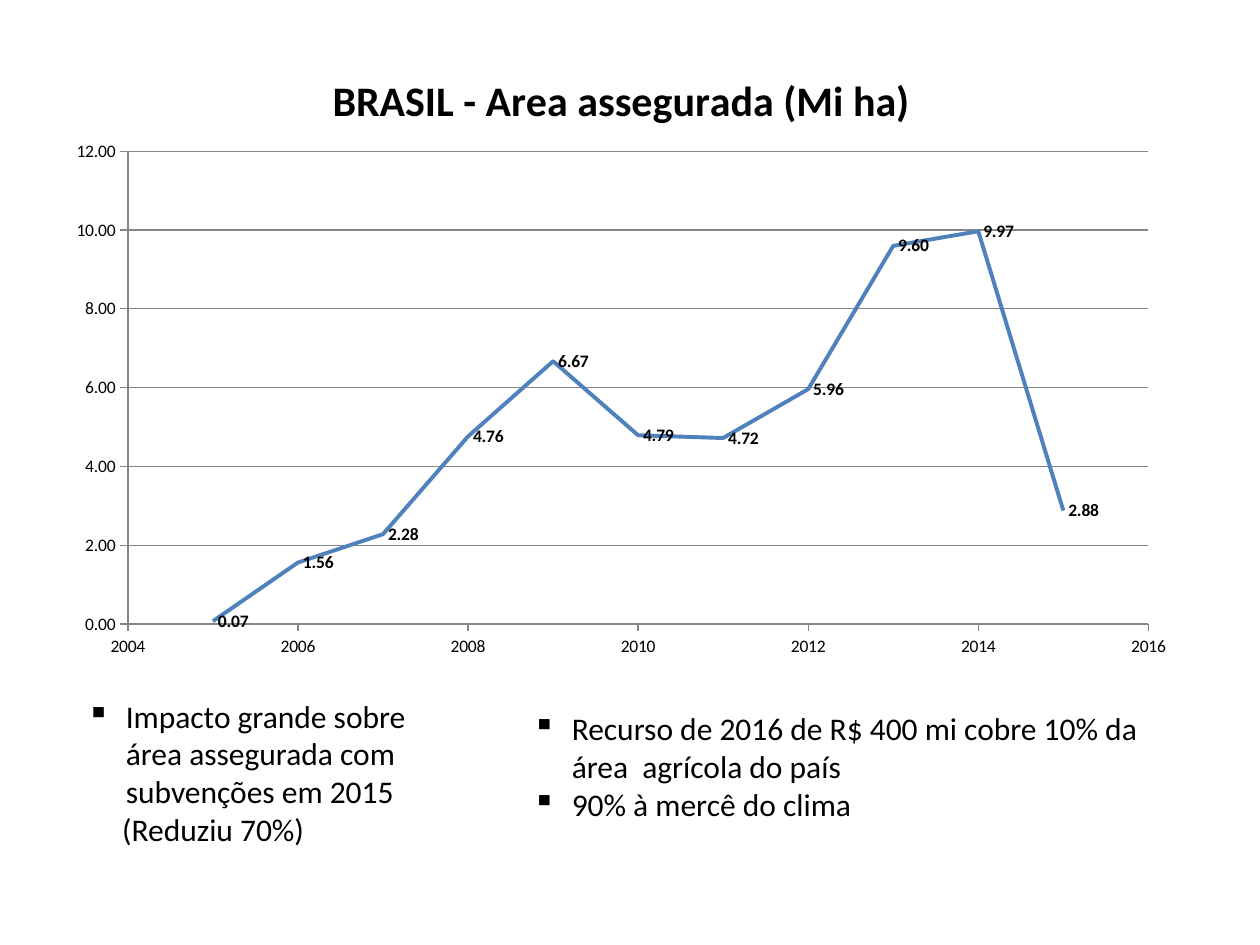
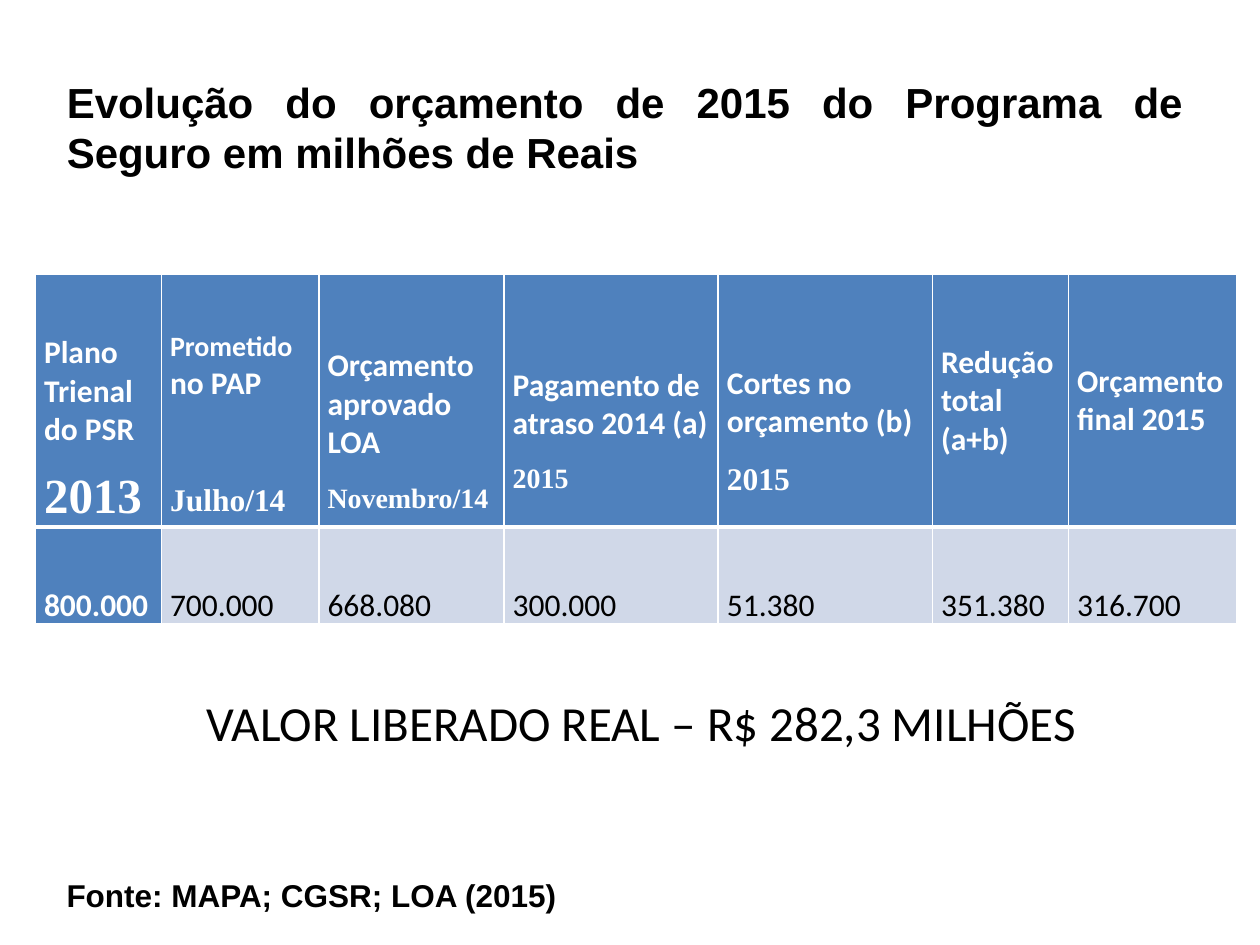
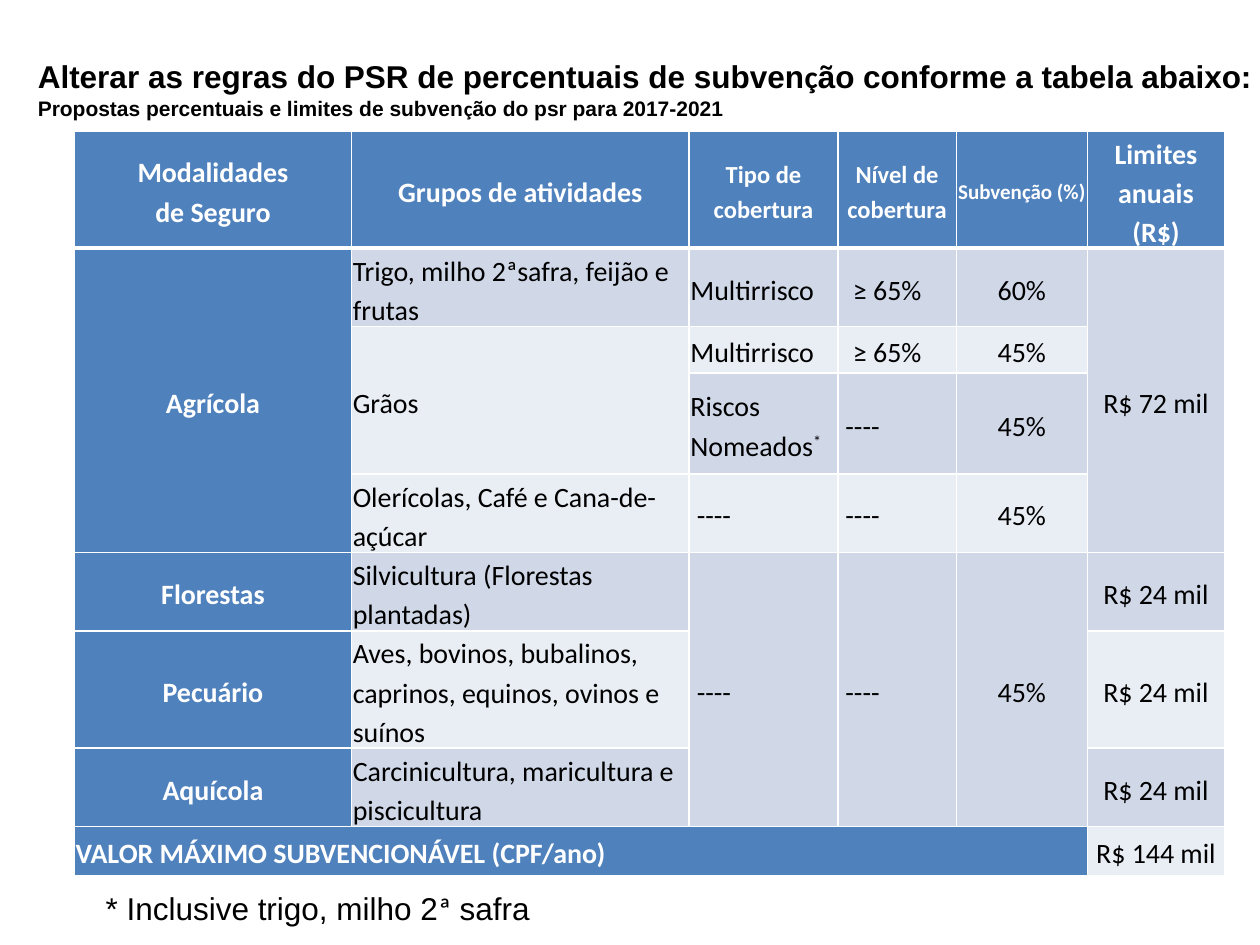
"""Builds three slides on rural insurance: a line chart and two tables."""
from lxml import etree
from pptx import Presentation
from pptx.chart.data import XyChartData
from pptx.chart.datalabel import DataLabels
from pptx.dml.color import RGBColor
from pptx.enum.chart import XL_CHART_TYPE, XL_LABEL_POSITION, XL_TICK_MARK
from pptx.enum.text import MSO_ANCHOR, MSO_AUTO_SIZE, PP_ALIGN
from pptx.oxml.ns import qn
from pptx.util import Pt

PX = 9144
SLIDE_W, SLIDE_H = 1000, 750
TITLE_ONLY, BLANK = 5, 6
LEFT, CENTER, JUSTIFY = PP_ALIGN.LEFT, PP_ALIGN.CENTER, PP_ALIGN.JUSTIFY
TOP, MIDDLE = MSO_ANCHOR.TOP, MSO_ANCHOR.MIDDLE
FIT_SHAPE = MSO_AUTO_SIZE.SHAPE_TO_FIT_TEXT
SCATTER = XL_CHART_TYPE.XY_SCATTER_LINES_NO_MARKERS
LABEL_RIGHT, TICK_OUT = XL_LABEL_POSITION.RIGHT, XL_TICK_MARK.OUTSIDE
ARIAL, CALIBRI, TIMES = "Arial", "Calibri", "Times New Roman"
BLACK, WHITE, BLUE, GRAY = "000000", "FFFFFF", "4F81BD", "868686"
BANDS = ("E9EDF4", "D0D8E8")

AREA_TITLE = "BRASIL - Area assegurada (Mi ha)"
FIRST_YEAR = 2005
AREAS = [0.07, 1.56, 2.28, 4.76, 6.67, 4.79, 4.72, 5.96, 9.60, 9.97, 2.88]
PLOT_LAYOUT = {"x": 0.065, "y": 0.17, "w": 0.9, "h": 0.758}
IMPACT = [
    ("Impacto grande sobre área assegurada com subvenções em 2015", True),
    ("(Reduziu 70%)", False),
]
FUNDS = [
    ("Recurso de 2016 de R$ 400 mi cobre 10% da área  agrícola do país", True),
    ("90% à mercê do clima", True),
]

BUDGET_TITLE = "Evolução do orçamento de 2015 do Programa de Seguro em milhões de Reais"
BUDGET_COLS = [100, 125, 147, 170, 170, 108, 134]
BUDGET_ROWS = [197, 62]
BUDGET_HEADS = [
    (47, TOP, "Plano Trienal do PSR", ("2013", 28, 12)),
    (44, TOP, [("Prometido ", CALIBRI, 16), ("no PAP", CALIBRI, 18)], ("Julho/14", 18, 46)),
    (47, MIDDLE, "Orçamento aprovado LOA", ("Novembro/14", 16, 12)),
    (47, MIDDLE, "Pagamento de atraso 2014 (a)", ("2015", 16, 12)),
    (47, MIDDLE, "Cortes no orçamento (b)", ("2015", 18, 12)),
    (0, MIDDLE, "Redução total (a+b)", None),
    (0, MIDDLE, "Orçamento final 2015", None),
]
BUDGET_VALUES = ["800.000", "700.000", "668.080", "300.000", "51.380", "351.380", "316.700"]
RELEASED = "VALOR LIBERADO REAL – R$ 282,3 MILHÕES"
SOURCE = "Fonte: MAPA; CGSR; LOA (2015)"

RULES_TITLE = [
    ([("Alterar as regras do PSR de percentuais de subven", ARIAL, 18), ("ç", CALIBRI, 18),
      ("ão conforme a tabela abaixo:", ARIAL, 18)], 18),
    ([("Propostas percentuais e limites de subven", ARIAL, 12), ("ç", CALIBRI, 12),
      ("ão do psr para 2017-2021", ARIAL, 12)], 12),
]
RULES_COLS = [220, 268, 118, 94, 104, 109]
RULES_ROWS = [80, 53, 37, 80, 26, 35, 53, 53, 39]
RULES_HEAD_SIZES = [16, 16, 14, 14, 12, 16]
NAMED_RISKS = [("Riscos Nomeados", CALIBRI, 16), ("*", CALIBRI, 16)]
RULES = [
    ["Modalidades\nde Seguro", "Grupos de atividades", "Tipo de cobertura",
     "Nível de cobertura", "Subvenção (%)", "Limites anuais\n(R$)"],
    ["Agrícola", "Trigo, milho 2ªsafra, feijão e frutas", "Multirrisco", "≥ 65%", "60%", "R$ 72 mil"],
    [None, "Grãos", "Multirrisco", "≥ 65%", "45%", None],
    [None, None, NAMED_RISKS, "----", "45%", None],
    [None, "Olerícolas, Café e Cana-de-açúcar", "----", "----", "45%", None],
    ["Florestas", "Silvicultura (Florestas plantadas)", "----", "----", "45%", "R$ 24 mil"],
    ["Pecuário", "Aves, bovinos, bubalinos, caprinos, equinos, ovinos e suínos",
     None, None, None, "R$ 24 mil"],
    ["Aquícola", "Carcinicultura, maricultura e piscicultura", None, None, None, "R$ 24 mil"],
    ["VALOR MÁXIMO SUBVENCIONÁVEL (CPF/ano)", None, None, None, None, "R$ 144 mil"],
]
RULES_MERGES = [((1, 0), (4, 0)), ((1, 5), (4, 5)), ((2, 1), (3, 1)), ((5, 2), (7, 2)),
                ((5, 3), (7, 3)), ((5, 4), (7, 4)), ((8, 0), (8, 4))]
RULES_INDENTS = {"≥ 65%": 11, "----": 5}
FOOTNOTE = [("* Inclusive trigo, milho 2", ARIAL, 18), ("ª", CALIBRI, 18), (" safra", ARIAL, 18)]


def rgb(value):
    return RGBColor.from_string(value)


def box(*lengths):
    return [n * PX for n in lengths]


def write(p, content, size, color=BLACK, bold=False, font=CALIBRI, align=LEFT):
    p.alignment = align
    p.font.name, p.font.size, p.font.bold = font, Pt(size), bold
    p.font.color.rgb = rgb(color)
    if isinstance(content, str):
        p.text = content
        return
    for text, name, points in content:
        r = p.add_run()
        r.text = text
        r.font.name, r.font.size = name, Pt(points)


def paragraph(tf, index):
    return tf.add_paragraph() if index else tf.paragraphs[0]


def add_text(s, at, wrap=False):
    tf = s.shapes.add_textbox(*box(*at)).text_frame
    tf.word_wrap, tf.auto_size = wrap, FIT_SHAPE
    return tf


def place_title(s, at, wrap):
    sp = s.shapes.title
    sp.left, sp.top, sp.width, sp.height = box(*at)
    tf = sp.text_frame
    tf.word_wrap, tf.auto_size, tf.vertical_anchor = wrap, FIT_SHAPE, MIDDLE
    return tf


def add_list(s, at, items):
    tf = add_text(s, at, True)
    for i, (text, bulleted) in enumerate(items):
        p = paragraph(tf, i)
        write(p, text, 18)
        pPr = p._p.get_or_add_pPr()
        pPr.set("marL", str((31 if bulleted else 28) * PX))
        if bulleted:
            pPr.set("indent", str(-31 * PX))
            bullet = etree.Element(qn("a:buChar"), char="▪")
            pPr.insert_element_before(bullet, "a:tabLst", "a:defRPr", "a:extLst")


def add_table(s, left, top, cols, rows):
    at = box(left, top, sum(cols), sum(rows))
    tbl = s.shapes.add_table(len(rows), len(cols), *at).table
    tbl.first_row = tbl.horz_banding = False
    for col, width in zip(tbl.columns, cols):
        col.width = width * PX
    for row, height in zip(tbl.rows, rows):
        row.height = height * PX
    return tbl


def format_cell(cell, fill, margins, bottom=1, anchor=MIDDLE):
    cell.margin_left, cell.margin_top, cell.margin_right, cell.margin_bottom = box(*margins)
    cell.vertical_anchor = anchor
    tcPr = cell._tc.get_or_add_tcPr()
    for side, points in zip("LRTB", (1, 1, 1, bottom)):
        ln = etree.SubElement(tcPr, qn(f"a:ln{side}"), w=str(Pt(points)))
        solid = etree.SubElement(ln, qn("a:solidFill"))
        etree.SubElement(solid, qn("a:srgbClr"), val=WHITE)
    cell.fill.solid()
    cell.fill.fore_color.rgb = rgb(fill)


def format_axis(axis, low, high, number_format):
    axis.minimum_scale, axis.maximum_scale, axis.major_unit = low, high, 2
    axis.major_tick_mark = TICK_OUT
    axis.tick_labels.number_format = number_format
    axis.tick_labels.number_format_is_linked = False
    axis.format.line.color.rgb = rgb(GRAY)
    axis.format.line.width = Pt(0.75)


def add_area_chart(s):
    data = XyChartData(number_format="0.00")
    points = data.add_series("Series 1")
    for year, area in enumerate(AREAS, FIRST_YEAR):
        points.add_data_point(year, area)
    chart = s.shapes.add_chart(SCATTER, *box(43, 36, 900, 495), data).chart
    chart.has_legend = False
    chart.font.name, chart.font.size = CALIBRI, Pt(10)
    chart.font.color.rgb = rgb(BLACK)
    chart.has_title = True
    write(chart.chart_title.text_frame.paragraphs[0], AREA_TITLE, 24, bold=True, align=CENTER)
    chart.chart_title.include_in_layout = False

    format_axis(chart.category_axis, 2004, 2016, "0")
    format_axis(chart.value_axis, 0, 12, "0.00")
    chart.category_axis.has_major_gridlines = False
    chart.value_axis.has_major_gridlines = True
    grid = chart.value_axis.major_gridlines.format.line
    grid.color.rgb, grid.width = rgb(GRAY), Pt(0.75)

    plot = chart.plots[0]
    plot.vary_by_categories = False
    series = plot.series[0]
    series.format.line.color.rgb = rgb(BLUE)
    series.format.line.width = Pt(2.25)
    labels = DataLabels(series._element.get_or_add_dLbls())
    labels.show_value, labels.position = True, LABEL_RIGHT
    labels.number_format, labels.number_format_is_linked = "0.00", False
    labels.font.bold, labels.font.size = True, Pt(10)

    area = chart._chartSpace.chart.plotArea
    for old in area.findall(qn("c:layout")):
        area.remove(old)
    layout = etree.Element(qn("c:layout"))
    area.insert(0, layout)
    manual = etree.SubElement(layout, qn("c:manualLayout"))
    modes = {"layoutTarget": "inner", "xMode": "edge", "yMode": "edge"}
    for tag, value in {**modes, **PLOT_LAYOUT}.items():
        etree.SubElement(manual, qn(f"c:{tag}"), val=str(value))


def area_slide(prs):
    s = prs.slides.add_slide(prs.slide_layouts[BLANK])
    add_area_chart(s)
    add_list(s, (59, 548, 279, 162), IMPACT)
    add_list(s, (413, 558, 500, 101), FUNDS)


def budget_slide(prs):
    s = prs.slides.add_slide(prs.slide_layouts[TITLE_ONLY])
    tf = place_title(s, (43, 55, 906, 91), True)
    write(tf.paragraphs[0], BUDGET_TITLE, 24, bold=True, font=ARIAL, align=JUSTIFY)
    tbl = add_table(s, 28, 218, BUDGET_COLS, BUDGET_ROWS)
    for c, (gap, anchor, head, date) in enumerate(BUDGET_HEADS):
        cell = tbl.cell(0, c)
        format_cell(cell, BLUE, (7, gap, 7, 0), 3, anchor)
        write(cell.text_frame.paragraphs[0], head, 18, WHITE, True)
        if date:
            text, size, before = date
            p = cell.text_frame.add_paragraph()
            write(p, text, size, WHITE, True, TIMES)
            p.space_before = Pt(before)
    for c, value in enumerate(BUDGET_VALUES):
        cell, first = tbl.cell(1, c), c == 0
        format_cell(cell, BLUE if first else BANDS[1], (7, 47, 7, 0))
        write(cell.text_frame.paragraphs[0], value, 18, WHITE if first else BLACK, first)
    write(add_text(s, (43, 690, 413, 40)).paragraphs[0], SOURCE, 18, bold=True,
          font=ARIAL, align=JUSTIFY)
    write(add_text(s, (154, 545, 718, 57)).paragraphs[0], RELEASED, 28)


def rules_slide(prs):
    s = prs.slides.add_slide(prs.slide_layouts[TITLE_ONLY])
    tf = place_title(s, (20, 40, 993, 61), False)
    for i, (content, size) in enumerate(RULES_TITLE):
        write(paragraph(tf, i), content, size, bold=True, font=ARIAL)
    tbl = add_table(s, 59, 104, RULES_COLS, RULES_ROWS)
    last = len(RULES) - 1
    for r, row in enumerate(RULES):
        for c, content in enumerate(row):
            cell, head = tbl.cell(r, c), r == 0 or c == 0
            indent = 1 if isinstance(content, list) else 1 + RULES_INDENTS.get(content, 0)
            format_cell(cell, BLUE if head else BANDS[r % 2], (indent, 1, 1, 0), 1 if r else 3)
            if content is None:
                continue
            centred = r == 0 or c in (0, 4, 5) and (r, c) != (last, 0)
            p = cell.text_frame.paragraphs[0]
            write(p, content, 16 if r else RULES_HEAD_SIZES[c], WHITE if head else BLACK,
                  head, align=CENTER if centred else LEFT)
            p.line_spacing = 1.15
            if content is NAMED_RISKS:
                p.runs[1].font._element.set("baseline", "30000")
    for start, end in RULES_MERGES:
        tbl.cell(*start).merge(tbl.cell(*end))
    write(add_text(s, (74, 701, 360, 40)).paragraphs[0], FOOTNOTE, 18, font=ARIAL)


def main():
    prs = Presentation()
    prs.slide_width, prs.slide_height = box(SLIDE_W, SLIDE_H)
    area_slide(prs)
    budget_slide(prs)
    rules_slide(prs)
    prs.save("out.pptx")


if __name__ == "__main__":
    main()
